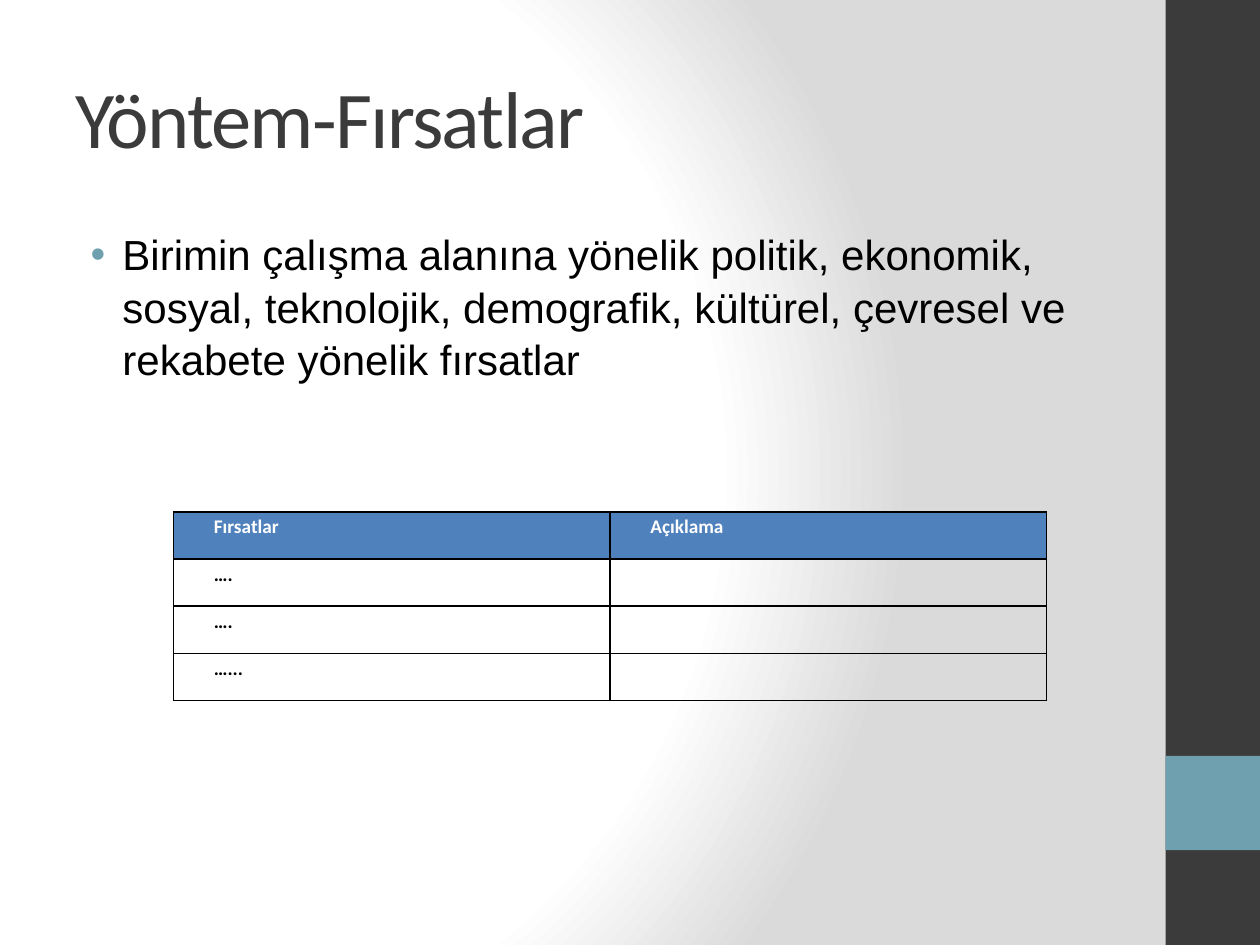
from lxml import etree
from pptx import Presentation
from pptx.dml.color import RGBColor
from pptx.enum import shapes, text
from pptx.oxml import parse_xml
from pptx.oxml.ns import nsdecls, qn
from pptx.util import Cm, Pt

COLORS = {
    "dark": "3B3B3B",
    "accent": "6EA0B0",
    "header": "4F81BD",
    "black": "000000",
    "white": "FFFFFF",
    "grey": "DADADA",
}


class SlideBuilder:
    title_font = "Calibri"
    body_font = "Arial"

    def __init__(self, presentation):
        self.slide = presentation.slides.add_slide(presentation.slide_layouts[6])

    def background(self, stops):
        fill = self.slide.background.fill
        fill.solid()
        properties = self.slide.element.find(".//" + qn("p:bgPr"))
        stop_xml = "".join(
            f'<a:gs pos="{position * 1000}"><a:srgbClr val="{COLORS[color]}"/></a:gs>'
            for position, color in stops
        )
        gradient = parse_xml(
            f'<a:gradFill {nsdecls("a")} rotWithShape="1"><a:gsLst>{stop_xml}</a:gsLst>'
            '<a:path path="circle"><a:fillToRect l="20000" t="50000" r="100000" b="50000"/>'
            "</a:path></a:gradFill>"
        )
        properties.replace(properties[0], gradient)

    def rectangle(self, left, top, width, height, color):
        shape = self.slide.shapes.add_shape(
            shapes.MSO_SHAPE.RECTANGLE, Cm(left), Cm(top), Cm(width), Cm(height)
        )
        shape.shadow.inherit = False
        shape.fill.solid()
        shape.fill.fore_color.rgb = RGBColor.from_string(COLORS[color])
        shape.line.fill.background()

    def format_runs(self, paragraph, size, font, color, bold=False):
        for run in paragraph.runs:
            run.font.size = Pt(size)
            run.font.name = font
            run.font.bold = bold
            run.font.color.rgb = RGBColor.from_string(COLORS[color])

    def indent(self, paragraph, margin, first_line):
        properties = paragraph._p.get_or_add_pPr()
        properties.set("marL", str(Cm(margin)))
        properties.set("indent", str(Cm(first_line)))
        return properties

    def text_box(self, left, top, width, height, content):
        shape = self.slide.shapes.add_textbox(Cm(left), Cm(top), Cm(width), Cm(height))
        frame = shape.text_frame
        frame.word_wrap = True
        frame.text = content
        return frame

    def title(self, left, top, width, height, content):
        frame = self.text_box(left, top, width, height, content)
        frame.vertical_anchor = text.MSO_ANCHOR.MIDDLE
        paragraph = frame.paragraphs[0]
        self.format_runs(paragraph, 46, self.title_font, "dark")
        for run in paragraph.runs:
            run._r.get_or_add_rPr().set("spc", "-100")

    def bullet(self, left, top, width, height, content):
        paragraph = self.text_box(left, top, width, height, content).paragraphs[0]
        paragraph.space_before = Pt(4.8)
        paragraph.line_spacing = 1.04
        self.format_runs(paragraph, 24, self.body_font, "black")
        properties = self.indent(paragraph, 0.95, -0.64)
        color = etree.SubElement(properties, qn("a:buClr"))
        etree.SubElement(color, qn("a:srgbClr"), val=COLORS["accent"])
        etree.SubElement(properties, qn("a:buFont"), typeface=self.body_font)
        etree.SubElement(properties, qn("a:buChar"), char="•")

    def borders(self, cell):
        properties = cell._tc.get_or_add_tcPr()
        for index, side in enumerate(("lnL", "lnR", "lnT", "lnB")):
            properties.insert(index, parse_xml(
                f'<a:{side} {nsdecls("a")} w="{Pt(1)}"><a:solidFill>'
                f'<a:srgbClr val="{COLORS["black"]}"/></a:solidFill></a:{side}>'
            ))

    def cell(self, cell, content, is_header):
        cell.margin_left = cell.margin_right = Cm(0.18)
        cell.margin_top = cell.margin_bottom = 0
        if is_header:
            cell.fill.solid()
            cell.fill.fore_color.rgb = RGBColor.from_string(COLORS["header"])
        else:
            cell.fill.background()
        self.borders(cell)
        cell.text_frame.text = content
        paragraph = cell.text_frame.paragraphs[0]
        paragraph.line_spacing = 1.15
        self.indent(paragraph, 1.27, -0.64)
        color = "white" if is_header else "black"
        self.format_runs(paragraph, 11, self.title_font, color, bold=True)

    def table(self, left, top, width, height, rows):
        table = self.slide.shapes.add_table(
            len(rows), len(rows[0]), Cm(left), Cm(top), Cm(width), Cm(height)
        ).table
        table.horz_banding = False
        for row_index, row in enumerate(rows):
            for column_index, content in enumerate(row):
                self.cell(table.cell(row_index, column_index), content, row_index == 0)


def main():
    presentation = Presentation()
    presentation.slide_width = Cm(25.4)
    presentation.slide_height = Cm(19.05)

    builder = SlideBuilder(presentation)
    builder.background([(0, "white"), (75, "white"), (100, "grey")])
    builder.rectangle(23.5, 0, 1.9, 19.05, "dark")
    builder.rectangle(23.5, 15.24, 1.9, 1.9, "accent")
    builder.title(1.27, 0.76, 21.16, 3.18, "Yöntem-Fırsatlar")
    builder.bullet(
        1.27, 4.45, 21.16, 5.49,
        "Birimin çalışma alanına yönelik politik, ekonomik, sosyal, teknolojik, "
        "demografik, kültürel, çevresel ve rekabete yönelik fırsatlar",
    )
    builder.table(3.5, 10.32, 17.6, 3.8, [
        ("Fırsatlar", "Açıklama"),
        ("….", ""),
        ("….", ""),
        ("…...", ""),
    ])
    presentation.save("out.pptx")


if __name__ == "__main__":
    main()
